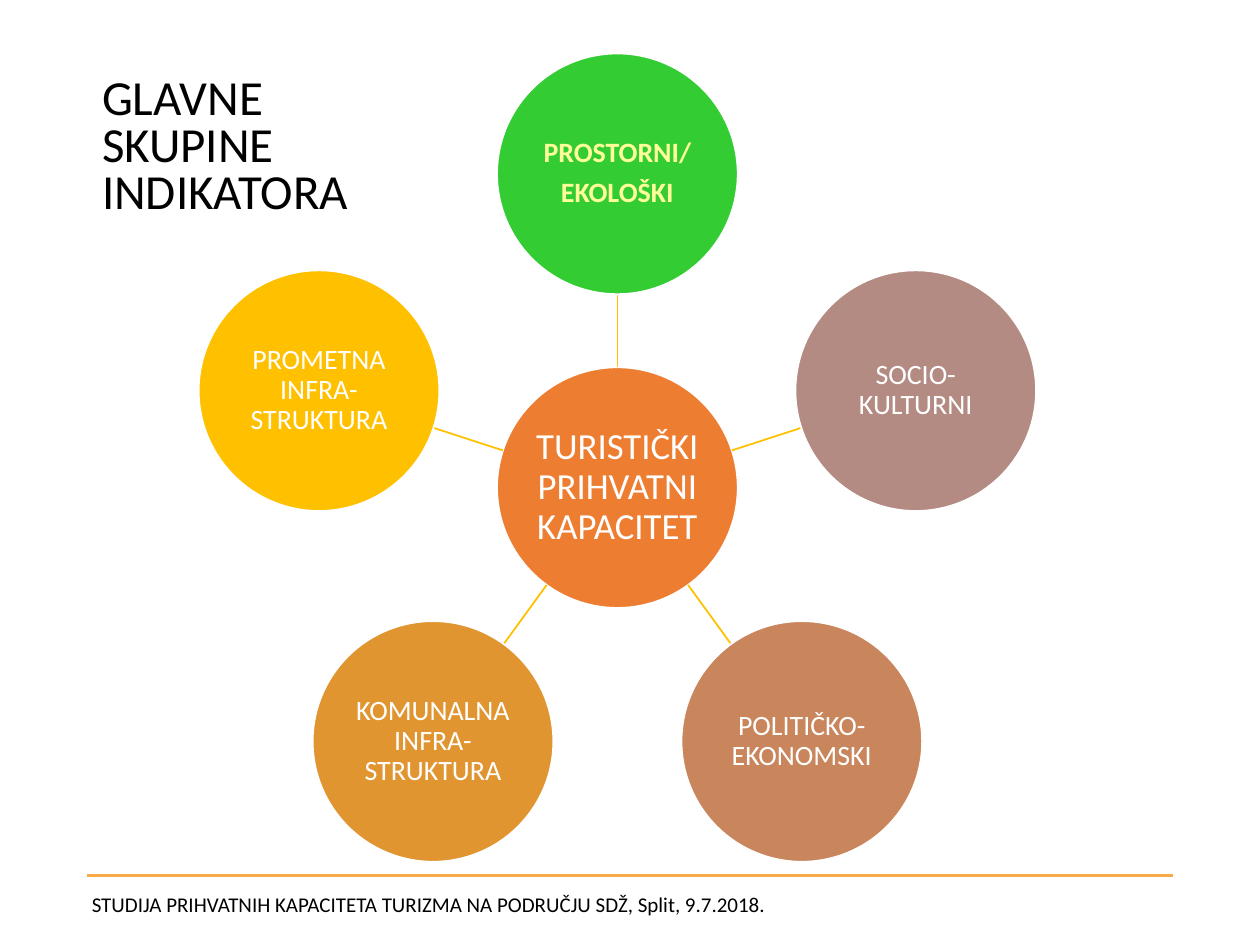
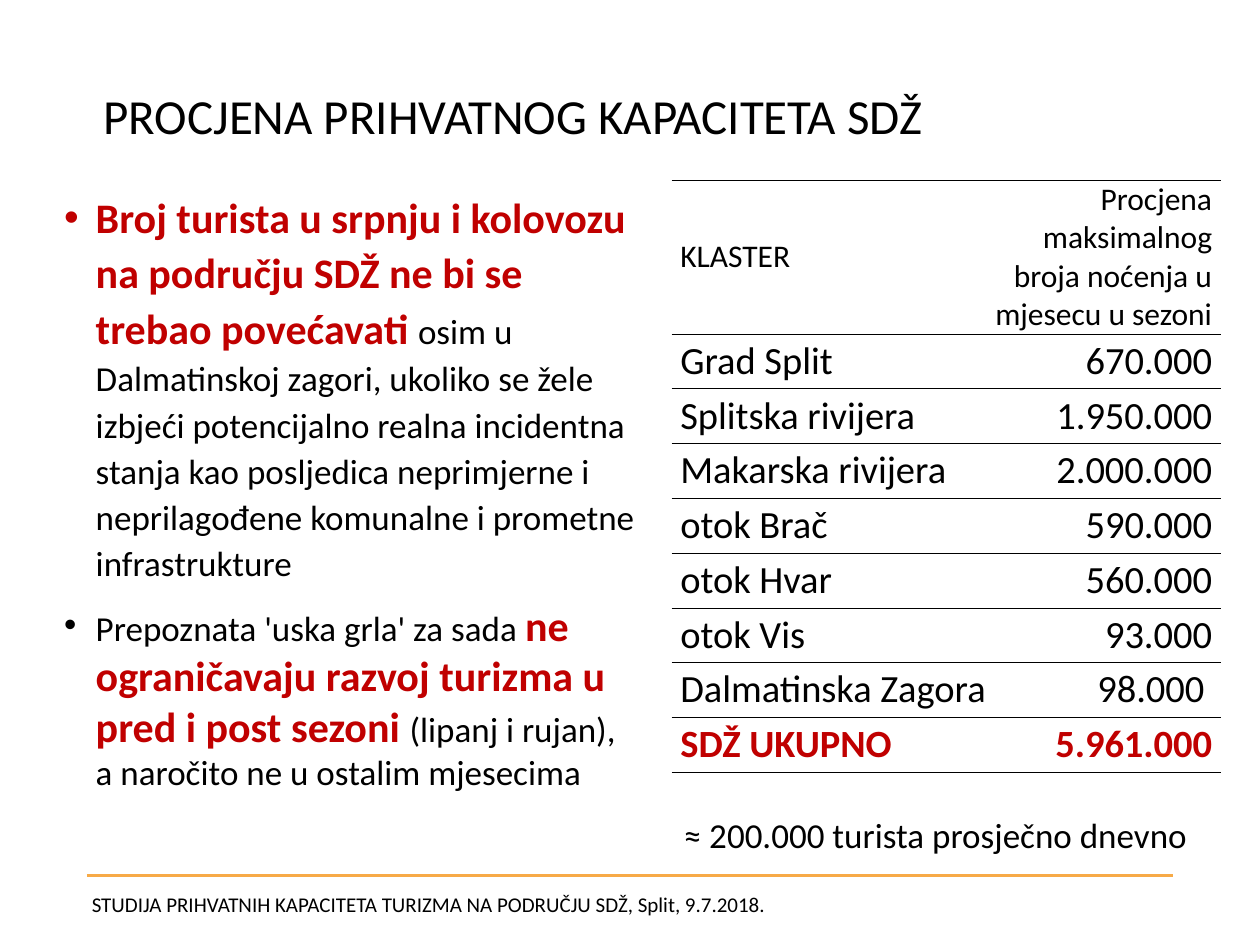
"""Build two slides on the tourist carrying capacity of SDŽ."""
import math
from dataclasses import dataclass

from lxml import etree
from pptx import Presentation
from pptx import util as u
from pptx.dml.color import RGBColor
from pptx.enum import shapes, text
from pptx.oxml import ns

Inches = u.Inches
LEFT, CENTER, RIGHT = text.PP_ALIGN.LEFT, text.PP_ALIGN.CENTER, text.PP_ALIGN.RIGHT


@dataclass(frozen=True)
class Theme:
    """Colours and type sizes of the presentation."""
    font: str = "Calibri"
    black: str = "000000"
    white: str = "FFFFFF"
    red: str = "C00000"
    footer_line: str = "F7AA47"
    spoke: str = "FFC000"
    hub: str = "ED7D31"
    spatial: str = "33CC33"
    spatial_text: str = "FFFF99"
    social: str = "B48B83"
    political: str = "C9855C"
    municipal: str = "E19530"
    traffic: str = "FFC000"
    title_size: float = 28
    strong_size: float = 24
    table_size: float = 22
    hub_size: float = 21
    body_size: float = 20
    header_size: float = 18
    node_size: float = 16
    footer_size: float = 12


THEME = Theme()


def rgb(color):
    """Turn a hex colour into an RGBColor."""
    return RGBColor.from_string(color)


def add_element(parent, tag, **attributes):
    """Append a DrawingML element and return it."""
    return etree.SubElement(parent, ns.qn(tag), attributes)


def write(paragraph, content, size=THEME.body_size, color=THEME.black, bold=False):
    """Add one formatted run to a paragraph."""
    run = paragraph.add_run()
    run.text = content
    run.font.name = THEME.font
    run.font.size = u.Pt(size)
    run.font.bold = bold
    run.font.color.rgb = rgb(color)


def set_paragraph(paragraph, align=LEFT, spacing=1.0, after=0):
    """Set alignment and spacing of a paragraph."""
    paragraph.alignment = align
    paragraph.line_spacing = spacing
    paragraph.space_before = u.Pt(0)
    paragraph.space_after = u.Pt(after)


class Deck:
    """Hold the style and the current slide."""

    def __init__(self, theme):
        """Start an empty presentation."""
        self.theme = theme
        self.presentation = Presentation()
        self.presentation.slide_width = Inches(10)
        self.presentation.slide_height = Inches(7.5)
        self.slide = None

    def new_slide(self, layout, title, box, spacing):
        """Add a slide with its title and the shared footer."""
        self.slide = self.presentation.slides.add_slide(
            self.presentation.slide_layouts[layout])
        frame = self.place(self.slide.shapes.title, box)
        frame.vertical_anchor = text.MSO_ANCHOR.MIDDLE
        set_paragraph(frame.paragraphs[0], spacing=spacing)
        write(frame.paragraphs[0], title, size=self.theme.title_size)
        self.line((0.69, 6.95), (9.31, 6.95), self.theme.footer_line, 2)
        self.text_box("STUDIJA PRIHVATNIH KAPACITETA TURIZMA NA PODRUČJU SDŽ, "
                      "Split, 9.7.2018.", (0.63, 7.03, 8.68, 0.3),
                      size=self.theme.footer_size)

    def place(self, shape, box):
        """Move a placeholder and return its text frame."""
        shape.left, shape.top, shape.width, shape.height = map(Inches, box)
        shape.text_frame.auto_size = text.MSO_AUTO_SIZE.NONE
        shape.text_frame.word_wrap = True
        return shape.text_frame

    def line(self, start, end, color, width):
        """Draw a straight line."""
        connector = self.slide.shapes.add_connector(
            shapes.MSO_CONNECTOR.STRAIGHT, *map(Inches, (*start, *end)))
        connector.line.color.rgb = rgb(color)
        connector.line.width = u.Pt(width)
        add_element(connector.element.spPr, "a:effectLst")

    def text_box(self, content, box, wrap=True, **style):
        """Add a one-paragraph text box."""
        frame = self.slide.shapes.add_textbox(*map(Inches, box)).text_frame
        frame.word_wrap = wrap
        write(frame.paragraphs[0], content, **style)

    def circle(self, center, diameter, fill, lines, **style):
        """Draw a labelled circle around a center."""
        left, top = (value - diameter / 2 for value in center)
        shape = self.slide.shapes.add_shape(
            shapes.MSO_SHAPE.OVAL, *map(Inches, (left, top, diameter, diameter)))
        shape.shadow.inherit = False
        shape.fill.solid()
        shape.fill.fore_color.rgb = rgb(fill)
        shape.line.color.rgb = rgb(self.theme.white)
        shape.line.width = u.Pt(1)
        frame = shape.text_frame
        frame.word_wrap = True
        frame.vertical_anchor = text.MSO_ANCHOR.MIDDLE
        frame.margin_left = frame.margin_right = Inches(0.01)
        frame.margin_top = frame.margin_bottom = Inches(0.01)
        for index, content in enumerate(lines):
            paragraph = frame.add_paragraph() if index else frame.paragraphs[0]
            set_paragraph(paragraph, CENTER, 0.9, 0.35 * style["size"])
            write(paragraph, content, **style)

    def bullets(self, items, box):
        """Fill the body placeholder with bulleted mixed-format paragraphs."""
        frame = self.place(self.slide.placeholders[1], box)
        for index, (spacing, runs) in enumerate(items):
            paragraph = frame.add_paragraph() if index else frame.paragraphs[0]
            set_paragraph(paragraph, spacing=spacing, after=9)
            properties = paragraph._p.get_or_add_pPr()
            properties.set("marL", str(Inches(0.25)))
            properties.set("indent", str(-Inches(0.25)))
            add_element(properties, "a:buFont", typeface="Arial")
            add_element(properties, "a:buChar", char="•")
            for content, style in runs:
                write(paragraph, content, **style)

    def cell(self, cell, content, align, **style):
        """Format a table cell with rules above and below."""
        cell.margin_left = cell.margin_right = Inches(0.07)
        cell.margin_top = cell.margin_bottom = 0
        cell.vertical_anchor = text.MSO_ANCHOR.MIDDLE
        properties = cell._tc.get_or_add_tcPr()
        for side in ("L", "R"):
            add_element(add_element(properties, f"a:ln{side}", w="0"), "a:noFill")
        for side in ("T", "B"):
            border = add_element(properties, f"a:ln{side}", w=str(u.Pt(0.25)))
            add_element(add_element(border, "a:solidFill"), "a:srgbClr",
                        val=self.theme.black)
        cell.fill.background()
        if content:
            paragraph = cell.text_frame.paragraphs[0]
            set_paragraph(paragraph, align)
            write(paragraph, content, **style)

    def table(self, rows, left, top, widths, heights):
        """Add a ruled table; a row with one text spans both columns."""
        table = self.slide.shapes.add_table(
            len(rows), len(widths), Inches(left), Inches(top),
            Inches(sum(widths)), Inches(sum(heights))).table
        table.first_row = table.horz_banding = False
        for column, width in zip(table.columns, widths):
            column.width = Inches(width)
        for index, (contents, style) in enumerate(rows):
            table.rows[index].height = Inches(heights[index])
            padded = (*contents, "")[:len(widths)]
            for column, (content, align) in enumerate(zip(padded, (LEFT, RIGHT))):
                self.cell(table.cell(index, column), content, align, **style)
            if len(contents) == 1:
                first = table.cell(index, 0)
                first.merge(table.cell(index, 1))
                properties = first.text_frame.paragraphs[0]._p.get_or_add_pPr()
                tabs = add_element(properties, "a:tabLst")
                add_element(tabs, "a:tab", pos=str(Inches(4.16)), algn="r")


def indicator_slide(deck):
    """Build the wheel of indicator groups."""
    theme = deck.theme
    deck.new_slide(5, "GLAVNE SKUPINE INDIKATORA", (0.71, 0.54, 2.37, 1.27), 0.8)
    hub, orbit, diameter = (4.9, 3.87), 2.49, 1.91
    groups = [
        (theme.spatial, ["PROSTORNI/", "EKOLOŠKI"],
         {"color": theme.spatial_text, "bold": True}),
        (theme.social, ["SOCIO-KULTURNI"], {}),
        (theme.political, ["POLITIČKO-EKONOMSKI"], {}),
        (theme.municipal, ["KOMUNALNA INFRA-STRUKTURA"], {}),
        (theme.traffic, ["PROMETNA INFRA-STRUKTURA"], {}),
    ]
    deck.circle(hub, diameter, theme.hub, ["TURISTIČKI PRIHVATNI KAPACITET"],
                size=theme.hub_size, color=theme.white)
    for index, (fill, lines, style) in enumerate(groups):
        angle = math.tau * index / len(groups)

        def point(radius):
            """Locate a point on the current spoke."""
            return (hub[0] + radius * math.sin(angle),
                    hub[1] - radius * math.cos(angle))

        deck.line(point(diameter / 2), point(orbit - diameter / 2), theme.spoke, 1)
        deck.circle(point(orbit), diameter, fill, lines,
                    **{"size": theme.node_size, "color": theme.white, **style})


def capacity_slide(deck):
    """Build the capacity estimate with its table."""
    theme = deck.theme
    strong = {"size": theme.strong_size, "color": theme.red, "bold": True}
    deck.new_slide(1, "PROCJENA PRIHVATNOG KAPACITETA SDŽ",
                   (0.72, 0.58, 8.62, 0.73), 0.9)
    deck.bullets([
        (1.1, [("Broj turista u srpnju i kolovozu na području SDŽ ne bi se "
                "trebao povećavati ", strong),
               ("osim u Dalmatinskoj zagori, ukoliko se žele izbjeći potencijalno "
                "realna incidentna stanja kao posljedica neprimjerne i "
                "neprilagođene komunalne i prometne infrastrukture", {})]),
        (1.0, [("Prepoznata 'uska grla' za sada ", {}),
               ("ne ograničavaju razvoj turizma u pred i post sezoni ", strong),
               ("(lipanj i rujan), a naročito ne u ostalim mjesecima", {})]),
    ], (0.41, 1.43, 4.75, 5.13))
    clusters = [
        ("Grad Split", "670.000"),
        ("Splitska rivijera", "1.950.000"),
        ("Makarska rivijera", "2.000.000"),
        ("otok Brač", "590.000"),
        ("otok Hvar", "560.000"),
        ("otok Vis", "93.000"),
        ("Dalmatinska Zagora\t98.000",),
    ]
    header = ("KLASTER", "Procjena maksimalnog broja noćenja u mjesecu u sezoni")
    rows = [(header, {"size": theme.header_size}),
            *((cluster, {"size": theme.table_size}) for cluster in clusters),
            (("SDŽ UKUPNO", "5.961.000"), {**strong, "size": theme.table_size})]
    deck.table(rows, 5.33, 1.43, (2.41, 1.95), [1.22] + [0.435] * 8)
    deck.text_box("≈ 200.000 turista prosječno dnevno",
                  (5.33, 6.41, 4.24, 0.44), wrap=False)


def main():
    """Build and save the presentation."""
    deck = Deck(THEME)
    indicator_slide(deck)
    capacity_slide(deck)
    deck.presentation.save("out.pptx")


if __name__ == "__main__":
    main()
